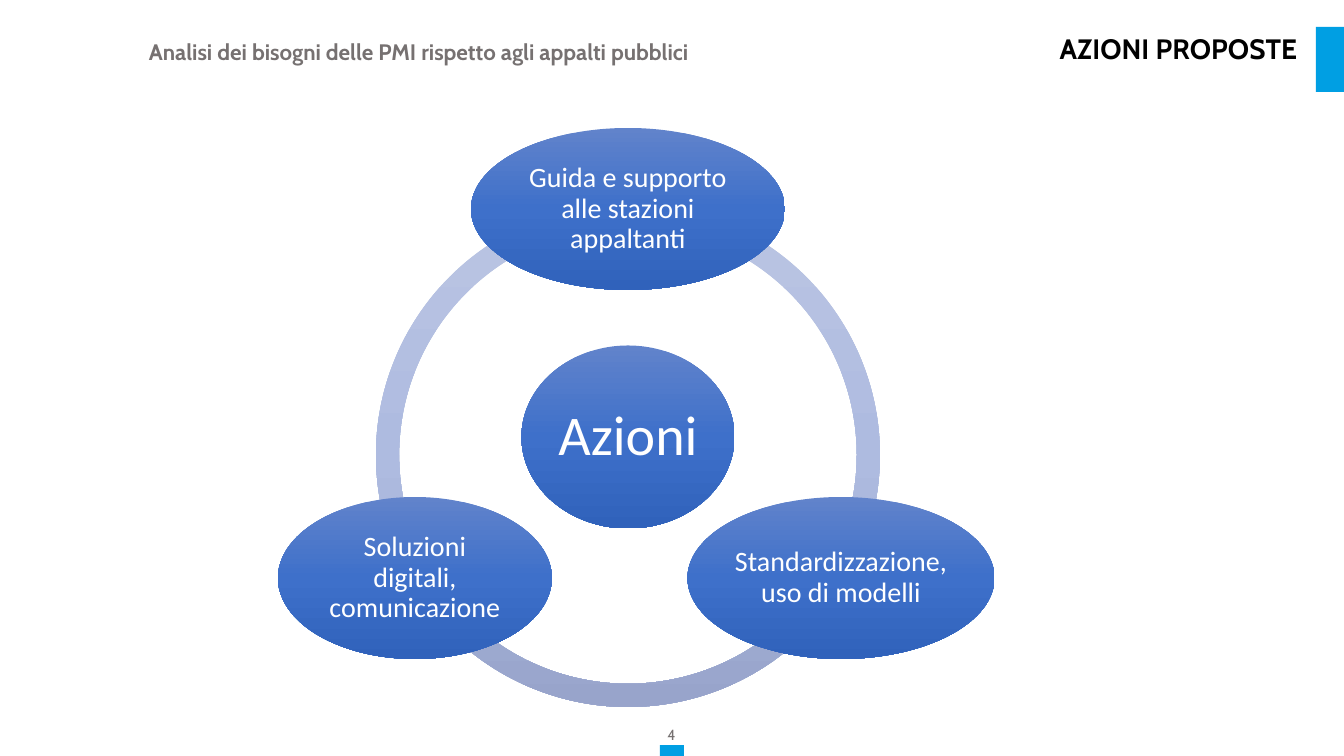
import copy
import math

import pptx
import pptx.dml.color
import pptx.enum.shapes
import pptx.enum.text
import pptx.util

COLORS = {"accent": "009FE3", "gray": "767171", "black": "000000", "white": "FFFFFF"}
GRADIENTS = {
    "ring": ["BBC5E3", "AEBBE0", "98A4CB"],
    "node": ["6183CB", "3E70CA", "3062BB"],
}

ACCENT_BARS = [(660, 745, 24, 11), (1316, 27, 28, 65)]
LABELS = [
    {"text": "Analisi dei bisogni delle PMI rispetto agli appalti pubblici",
     "box": (139, 33, 722, 31), "size": 16, "color": "gray", "bold": True},
    {"text": "4", "box": (650, 718, 43, 33), "size": 10.5, "color": "gray",
     "align": "CENTER", "anchor": "MIDDLE"},
    {"text": "AZIONI PROPOSTE", "box": (871, 33, 436, 52), "size": 20,
     "color": "black", "bold": True, "align": "RIGHT", "spacing": 0.8},
]
HUB = {"text": "Azioni", "center": (628, 437), "extent": (213, 183), "size": 40, "inset": 0}
ACTIONS = [
    ("Guida e supporto alle stazioni appaltanti", 314, 3),
    ("Standardizzazione, uso di modelli", 307, 0),
    ("Soluzioni digitali, comunicazione", 274, 3),
]
ACTION_HEIGHT = 162
RING_CENTER = (628, 455)
RING_SIZE = 504
RING_THICKNESS = 0.046
ORBIT_RADIUS = 246
FIRST_ANGLE = -90
ARC_STARTS = [90, 18, 162]
ARC_ENDS = [162, 90, 18]

SCALE = 914400 / 100.8
SHAPES = pptx.enum.shapes.MSO_SHAPE


def px(value):
    return pptx.util.Emu(round(value * SCALE))


def rgb(value):
    return pptx.dml.color.RGBColor.from_string(value)


def set_values(target, values):
    for name, value in values.items():
        setattr(target, name, value)


def centered(center, extent):
    return (center[0] - extent[0] / 2, center[1] - extent[1] / 2, *extent)


def add_shape(slide, kind, box):
    shape = slide.shapes.add_shape(kind, *map(px, box))
    shape.shadow.inherit = False
    shape.line.fill.background()
    return shape


def fill_gradient(shape, colors):
    shape.fill.gradient()
    shape.fill.gradient_angle = 270
    stop_list = shape.fill.gradient_stops[0]._gs.getparent()
    stop_list.insert(1, copy.deepcopy(stop_list[0]))
    for index, (stop, color) in enumerate(zip(shape.fill.gradient_stops, colors)):
        stop.color.rgb = rgb(color)
        stop.position = index / (len(colors) - 1)


def write_text(shape, text, font, color, align="LEFT", anchor="TOP", spacing=1.0, inset=None):
    frame = shape.text_frame
    set_values(frame, {"word_wrap": True,
                       "vertical_anchor": getattr(pptx.enum.text.MSO_ANCHOR, anchor)})
    if inset is not None:
        sides = ("left", "top", "right", "bottom")
        set_values(frame, {f"margin_{side}": px(inset) for side in sides})
    paragraph = frame.paragraphs[0]
    set_values(paragraph, {"alignment": getattr(pptx.enum.text.PP_ALIGN, align),
                           "line_spacing": spacing})
    run = paragraph.add_run()
    run.text = text
    set_values(run.font, font)
    run.font.color.rgb = rgb(COLORS[color])


def add_node(slide, text, center, extent, size, inset):
    node = add_shape(slide, SHAPES.OVAL, centered(center, extent))
    fill_gradient(node, GRADIENTS["node"])
    font = {"name": "Calibri", "size": pptx.util.Pt(size), "bold": False}
    write_text(node, text, font, "white", "CENTER", "MIDDLE", 0.9, inset)


def add_frame(slide):
    for box in ACCENT_BARS:
        bar = add_shape(slide, SHAPES.RECTANGLE, box)
        bar.fill.solid()
        bar.fill.fore_color.rgb = rgb(COLORS["accent"])
    for label in LABELS:
        box = slide.shapes.add_textbox(*map(px, label["box"]))
        font = {"name": "Cabin", "size": pptx.util.Pt(label["size"]),
                "bold": label.get("bold", False)}
        write_text(box, label["text"], font, label["color"], label.get("align", "LEFT"),
                   label.get("anchor", "TOP"), label.get("spacing", 1.0))


def add_cycle(slide):
    for start, end in zip(ARC_STARTS, ARC_ENDS):
        arc = add_shape(slide, SHAPES.BLOCK_ARC, centered(RING_CENTER, (RING_SIZE, RING_SIZE)))
        for index, value in enumerate((start * 0.6, end * 0.6, RING_THICKNESS)):
            arc.adjustments[index] = value
        fill_gradient(arc, GRADIENTS["ring"])
    add_node(slide, **HUB)
    for index, (text, width, inset) in enumerate(ACTIONS):
        angle = math.radians(FIRST_ANGLE + index * 360 / len(ACTIONS))
        center = (RING_CENTER[0] + ORBIT_RADIUS * math.cos(angle),
                  RING_CENTER[1] + ORBIT_RADIUS * math.sin(angle))
        add_node(slide, text, center, (width, ACTION_HEIGHT), 20, inset)


def main():
    presentation = pptx.Presentation()
    set_values(presentation, {"slide_width": px(1344), "slide_height": px(756)})
    slide = presentation.slides.add_slide(presentation.slide_layouts[6])
    add_frame(slide)
    add_cycle(slide)
    presentation.save("out.pptx")


if __name__ == "__main__":
    main()
